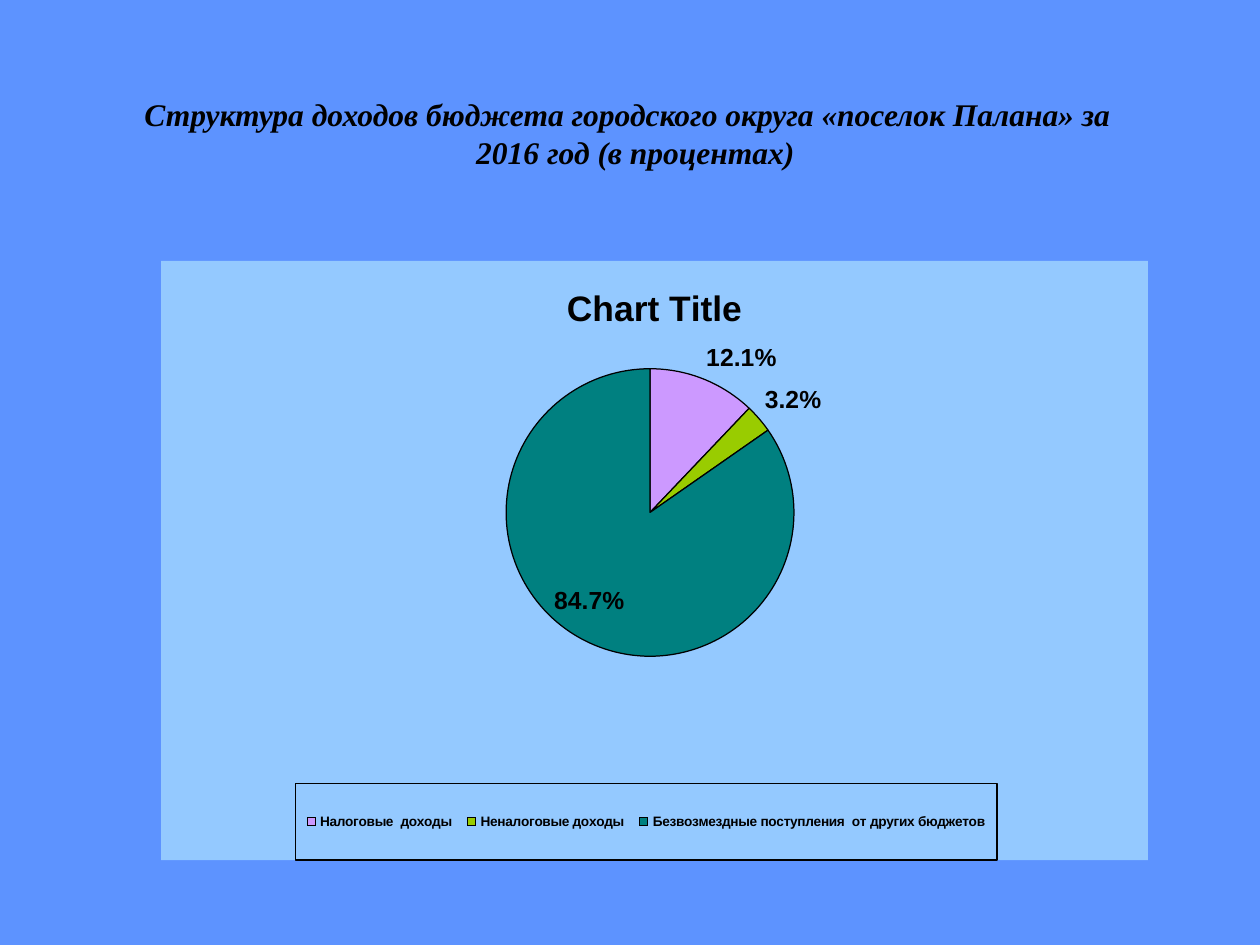
from lxml import etree
from pptx import Presentation
from pptx.chart.data import CategoryChartData
from pptx.dml.color import RGBColor
from pptx.enum.chart import XL_CHART_TYPE, XL_LABEL_POSITION, XL_LEGEND_POSITION
from pptx.enum.text import MSO_ANCHOR, PP_ALIGN
from pptx.oxml import parse_xml
from pptx.oxml.ns import nsdecls
from pptx.util import Cm, Pt

TITLE = "Структура доходов бюджета городского округа «поселок Палана» за \v 2016 год (в процентах)"
CHART_TITLE = "Chart Title"
INCOME = [
    ("Налоговые  доходы", 12.1, "CC99FF"),
    ("Неналоговые доходы", 3.2, "99CC00"),
    ("Безвозмездные поступления  от других бюджетов", 84.7, "008080"),
]
BACKGROUND, PANEL, BLACK = "5D93FF", "CCFFFF", "000000"
PLOT_AREA = (0.135, 0.18, 0.721, 0.48)
LEGEND_AREA = (0.136, 0.873, 0.711, 0.127)


def paint(fill, colour):
    fill.solid()
    fill.fore_color.rgb = RGBColor.from_string(colour)


def style(font, size, name="Arial"):
    font.name, font.size, font.bold = name, Pt(size), True
    font.color.rgb = RGBColor.from_string(BLACK)


def layout_xml(area, inner=False):
    """Manual chart layout from fractions of the chart (x, y, w, h)."""
    target = '<c:layoutTarget val="inner"/>' if inner else ""
    modes = '<c:xMode val="edge"/><c:yMode val="edge"/>'
    sizes = "".join(f'<c:{key} val="{value}"/>' for key, value in zip("xywh", area))
    return parse_xml(f'<c:layout {nsdecls("c")}><c:manualLayout>{target}{modes}{sizes}'
                     '</c:manualLayout></c:layout>')


def shape_properties(content):
    return parse_xml(f'<c:spPr {nsdecls("c", "a")}>{content}</c:spPr>')


def solid(colour, alpha=100):
    return (f'<a:solidFill><a:srgbClr val="{colour}"><a:alpha val="{alpha * 1000}"/>'
            '</a:srgbClr></a:solidFill>')


def add_title(slide):
    title = slide.shapes.title
    title.left, title.top, title.width, title.height = Cm(1.3), Cm(1.12), Cm(22.86), Cm(3.12)
    frame = title.text_frame
    frame.text = TITLE
    frame.word_wrap = True
    frame.vertical_anchor = MSO_ANCHOR.MIDDLE
    heading = frame.paragraphs[0]
    heading.alignment = PP_ALIGN.CENTER
    style(heading.font, 18, "Times New Roman")
    heading.font.italic = True


def add_income_chart(slide):
    names, shares, colours = zip(*INCOME)
    data = CategoryChartData(number_format="0.0")
    data.categories = names
    data.add_series("Series 1", shares)
    chart = slide.shapes.add_chart(XL_CHART_TYPE.PIE, Cm(3.25), Cm(5.26),
                                   Cm(19.89), Cm(12.09), data).chart
    style(chart.font, 16.8)

    chart.has_title = True
    chart.chart_title.text_frame.text = CHART_TITLE
    style(chart.chart_title.text_frame.paragraphs[0].font, 20.2)

    plot = chart.plots[0]
    plot.vary_by_categories = True
    for index, colour in enumerate(colours):
        wedge = plot.series[0].points[index].format
        paint(wedge.fill, colour)
        paint(wedge.line.fill, BLACK)
        wedge.line.width = Pt(0.71)

    labels = plot.series[0].data_labels
    labels.show_percentage, labels.show_value = True, False
    labels.number_format, labels.number_format_is_linked = "0.0%", False
    labels.position = XL_LABEL_POSITION.BEST_FIT
    style(labels.font, 14.1)

    chart.has_legend = True
    legend = chart.legend
    legend.position = XL_LEGEND_POSITION.BOTTOM
    legend.include_in_layout = False
    style(legend.font, 7.8)

    # Layouts, legend frame and translucent panel
    root = chart.element
    for old in root.xpath(".//c:plotArea/c:layout | .//c:legend/c:layout"):
        old.getparent().remove(old)
    root.xpath(".//c:plotArea")[0].insert(0, layout_xml(PLOT_AREA, inner=True))
    overlay = root.xpath(".//c:legend/c:overlay")[0]
    overlay.addprevious(layout_xml(LEGEND_AREA))
    overlay.addnext(shape_properties(f'<a:noFill/><a:ln w="9000">{solid(BLACK)}</a:ln>'))
    root.xpath("./c:chart")[0].addnext(
        shape_properties(solid(PANEL, 50) + "<a:ln><a:noFill/></a:ln>"))


def main():
    deck = Presentation()
    deck.slide_width, deck.slide_height = Cm(25.4), Cm(19.05)
    slide = deck.slides.add_slide(deck.slide_layouts[5])
    paint(slide.background.fill, BACKGROUND)
    add_title(slide)
    add_income_chart(slide)
    deck.save("out.pptx")


if __name__ == "__main__":
    main()
